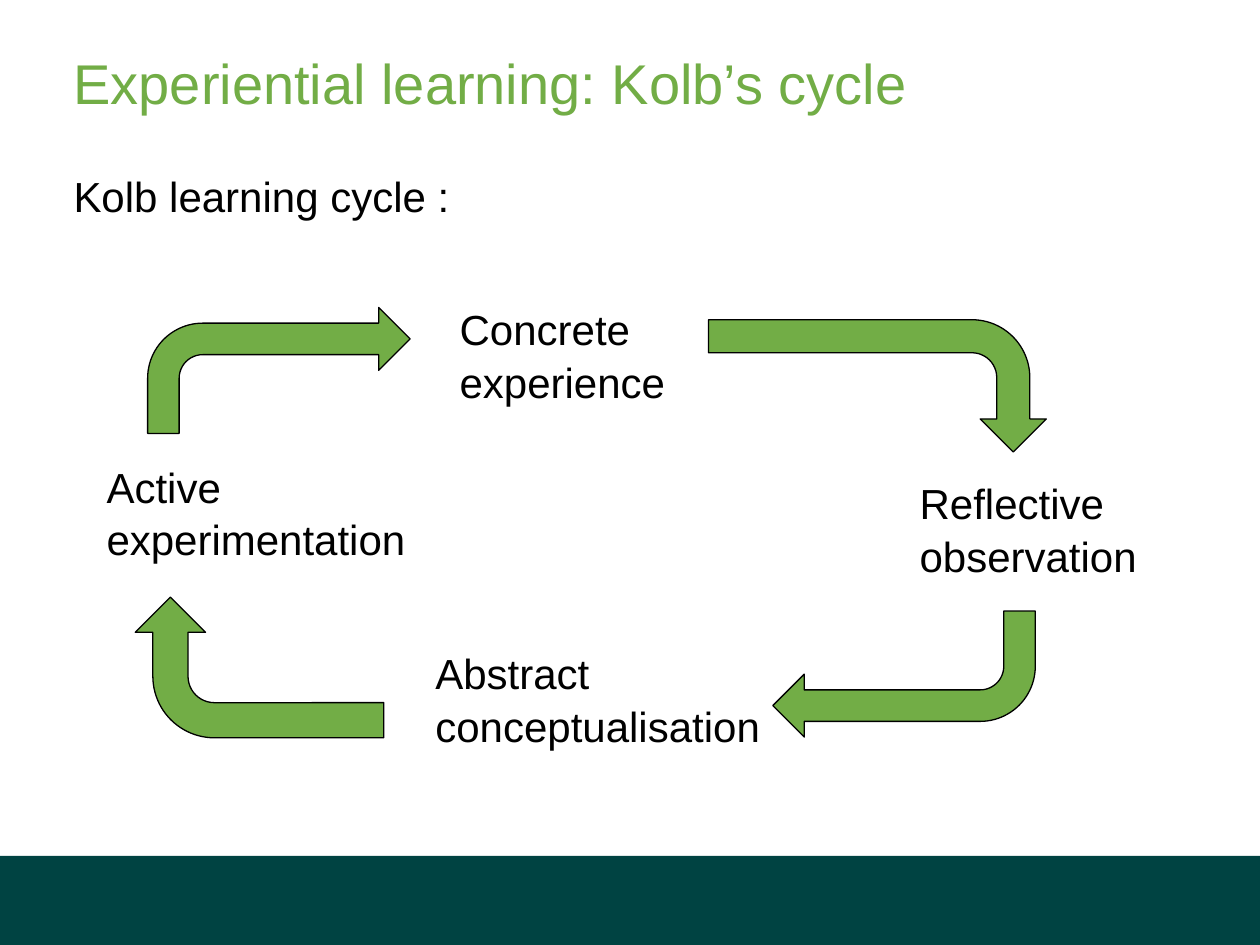
from pptx import Presentation
from pptx.dml.color import RGBColor
from pptx.enum.shapes import MSO_SHAPE
from pptx.enum.text import MSO_ANCHOR, MSO_AUTO_SIZE, PP_ALIGN
from pptx.oxml.ns import qn
from pptx.util import Pt

COLORS = {"green": "72AD46", "teal": "004342", "black": "000000"}
FONT = "Arial"

TITLE = "Experiential learning: Kolb’s cycle"
INTRO = "Kolb learning cycle :"

# Stage of the cycle: lines, (left, top, width)
STAGES = [
    (("Concrete", "experience"), (255.6, 168.5, 158.4)),
    (("Abstract", "conceptualisation"), (241.7, 365, 220.3)),
    (("Reflective", "observation"), (518.4, 267.8, 144.7)),
    (("Active", "experimentation"), (53.8, 258.5, 187.9)),
]
STAGE_HEIGHT = 65.5

# Arrow: rotation, (left, top, width, height) before rotation
ARROWS = [
    (0, (84.4, 175.7, 150, 72)),
    (90, (463.6, 124, 75.6, 193)),
    (270, (108.1, 310.4, 80.4, 142)),
    (180, (441.6, 349.2, 150, 72)),
]


def color(name):
    return RGBColor.from_string(COLORS[name])


def place(box, left, top, width, height):
    box.left, box.top, box.width, box.height = map(Pt, (left, top, width, height))


def write(box, lines, size, color_name, line_spacing, margins=(0, 0)):
    """Fill a box with one paragraph per line; margins are (sides, top and bottom)."""
    frame = box.text_frame
    frame.word_wrap = True
    frame.auto_size = MSO_AUTO_SIZE.NONE
    frame.vertical_anchor = MSO_ANCHOR.TOP
    frame.margin_left = frame.margin_right = Pt(margins[0])
    frame.margin_top = frame.margin_bottom = Pt(margins[1])
    for index, line in enumerate(lines):
        para = frame.add_paragraph() if index else frame.paragraphs[0]
        para.alignment = PP_ALIGN.LEFT
        para.line_spacing = line_spacing
        para.space_before = Pt(0)
        span = para.add_run()
        span.text = line
        span.font.name = FONT
        span.font.size = Pt(size)
        span.font.color.rgb = color(color_name)


def remove_bullet(para):
    properties = para._p.get_or_add_pPr()
    properties.set("marL", "0")
    properties.set("indent", "0")
    properties.append(properties.makeelement(qn("a:buNone"), {}))


def add_filled(page, kind, bounds, fill):
    shape = page.shapes.add_shape(kind, *map(Pt, bounds))
    shape.shadow.inherit = False
    shape.fill.solid()
    shape.fill.fore_color.rgb = color(fill)
    return shape


def main():
    deck = Presentation()
    deck.slide_width, deck.slide_height = Pt(720), Pt(540)
    page = deck.slides.add_slide(deck.slide_layouts[1])

    footer = add_filled(page, MSO_SHAPE.RECTANGLE, (0, 489, 720, 51), "teal")
    footer.line.fill.background()

    title, body = page.shapes.title, page.placeholders[1]
    place(title, 42, 24, 642, 60)
    write(title, [TITLE], 32, "green", 1.1)
    place(body, 42, 96, 642, 342.5)
    remove_bullet(body.text_frame.paragraphs[0])
    write(body, [INTRO], 24, "black", 1.05)

    for lines, bounds in STAGES:
        label = page.shapes.add_textbox(*map(Pt, (*bounds, STAGE_HEIGHT)))
        write(label, lines, 24, "black", 1.05, margins=(7.2, 3.6))

    for rotation, bounds in ARROWS:
        arrow = add_filled(page, MSO_SHAPE.BENT_ARROW, bounds, "green")
        arrow.rotation = rotation
        arrow.line.color.rgb = color("black")
        arrow.line.width = Pt(0.75)

    deck.save("out.pptx")


if __name__ == "__main__":
    main()
